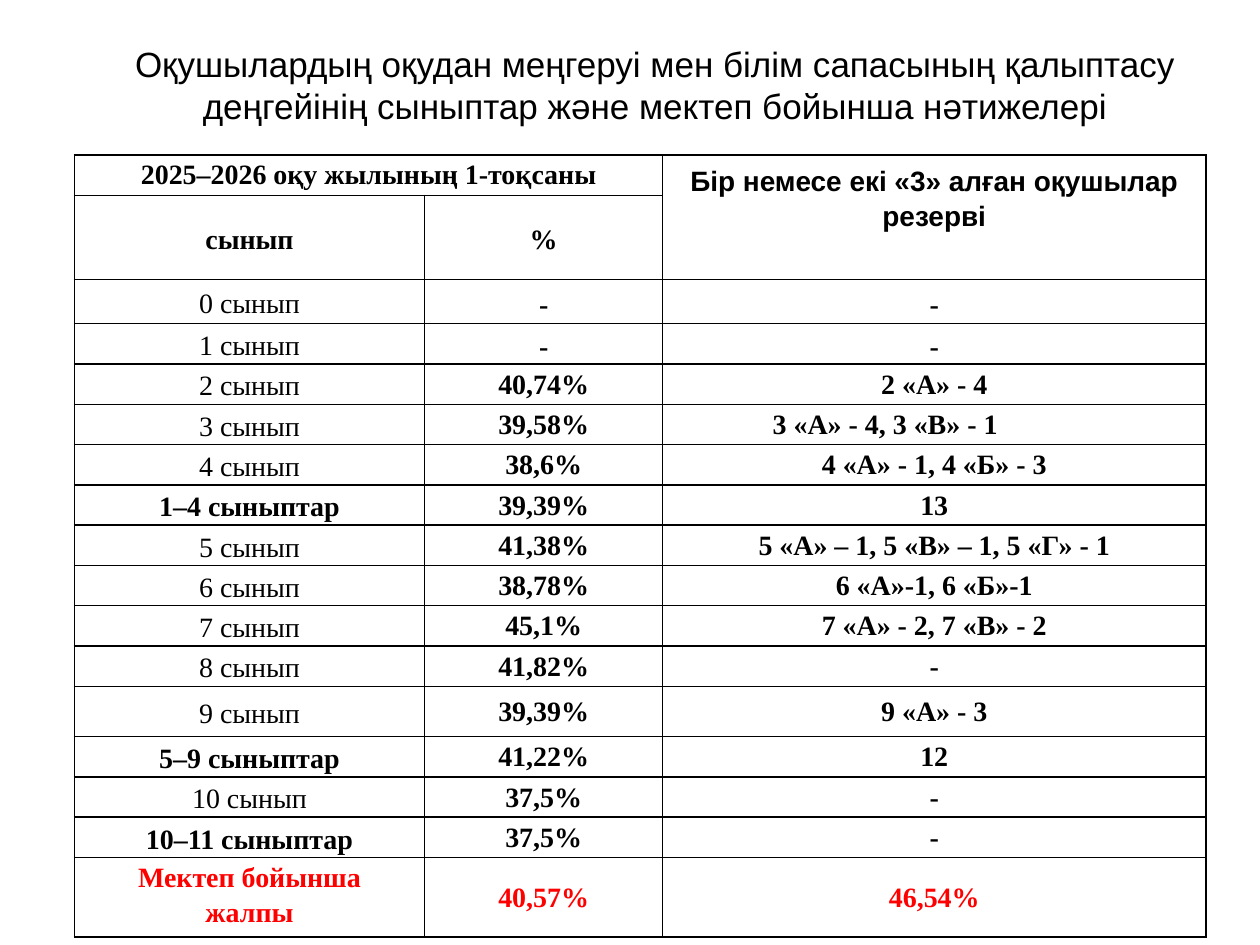
from pptx import Presentation
from pptx.dml.color import RGBColor as Rgb
from pptx.enum.text import MSO_ANCHOR as Anchor, MSO_AUTO_SIZE as Auto, PP_ALIGN as Align
from pptx.oxml import parse_xml
from pptx.oxml.ns import nsdecls
from pptx.util import Inches, Pt

COLORS = {"ink": "000000", "total": "FF0000"}
SERIF, SANS = "Times New Roman", "Arial"
TITLE = ("Оқушылардың оқудан меңгеруі мен білім сапасының қалыптасу "
         "деңгейінің сыныптар және мектеп бойынша нәтижелері")
TERM = "2025–2026 оқу жылының 1-тоқсаны"
RESERVE = "Бір немесе екі «3» алған оқушылар резерві"
TOTAL = "Мектеп бойынша\nжалпы"
COLS = [2.78, 1.89, 4.31]
HEAD = [0.32, 0.67]
TALL = {"0 сынып": 0.35, "9 сынып": 0.4, TOTAL: 0.63}
ROW = 0.32

# Class, share, pupils in reserve
ROWS = [
    ("0 сынып", "-", "-"),
    ("1 сынып", "-", "-"),
    ("2 сынып", "40,74%", "2 «А» - 4"),
    ("3 сынып", "39,58%", "3 «А» - 4, 3 «В» - 1"),
    ("4 сынып", "38,6%", "4 «А» - 1, 4 «Б» - 3"),
    ("1–4 сыныптар", "39,39%", "13"),
    ("5 сынып", "41,38%", "5 «А» – 1, 5 «В» – 1, 5 «Г» - 1"),
    ("6 сынып", "38,78%", "6 «А»-1, 6 «Б»-1"),
    ("7 сынып", "45,1%", "7 «А» - 2, 7 «В» - 2"),
    ("8 сынып", "41,82%", "-"),
    ("9 сынып", "39,39%", "9 «А» - 3"),
    ("5–9 сыныптар", "41,22%", "12"),
    ("10 сынып", "37,5%", "-"),
    ("10–11 сыныптар", "37,5%", "-"),
    (TOTAL, "40,57%", "46,54%"),
]


def style(para, size, face, color="ink", bold=False):
    para.alignment = Align.CENTER
    font = para.font
    font.size, font.name, font.bold = Pt(size), face, bold
    font.color.rgb = Rgb.from_string(COLORS[color])


def add_title(slide):
    title = slide.shapes.title
    title.left, title.top = Inches(0.67), Inches(0.29)
    title.width, title.height = Inches(9.06), Inches(1.11)
    frame = title.text_frame
    frame.text = TITLE
    frame.word_wrap, frame.auto_size = True, Auto.NONE
    frame.vertical_anchor = Anchor.TOP
    style(frame.paragraphs[0], 20, SANS)


def set_lines(cell):
    props = cell._tc.get_or_add_tcPr()
    for i, side in enumerate("LRTB"):
        props.insert(i, parse_xml(
            f'<a:ln{side} {nsdecls("a")} w="{Pt(1)}"><a:solidFill>'
            f'<a:srgbClr val="{COLORS["ink"]}"/></a:solidFill></a:ln{side}>'))


def fill_cell(cell, text, face=SERIF, color="ink", bold=True, spread=True,
              after=0, pad=(0.07, 0), anchor=Anchor.MIDDLE):
    side, top = pad
    cell.margin_left = cell.margin_right = Inches(side)
    cell.margin_top, cell.margin_bottom = Inches(top), 0
    cell.vertical_anchor = anchor
    cell.text = text
    for para in cell.text_frame.paragraphs:
        style(para, 16, face, color, bold)
        para.line_spacing = 1.15 if spread else 1.0
        para.space_after = Pt(after)


def add_grid(slide):
    heights = HEAD + [TALL.get(row[0], ROW) for row in ROWS]
    frame = slide.shapes.add_table(
        len(heights), len(COLS), Inches(0.59), Inches(1.23),
        Inches(sum(COLS)), Inches(sum(heights)))
    grid = frame.table
    grid.first_row = grid.horz_banding = False
    for col, width in zip(grid.columns, COLS):
        col.width = Inches(width)
    for row, height in zip(grid.rows, heights):
        row.height = Inches(height)
    for cell in grid.iter_cells():
        cell.fill.background()
        set_lines(cell)

    # Heading cells
    grid.cell(0, 0).merge(grid.cell(0, 1))
    grid.cell(0, 2).merge(grid.cell(1, 2))
    fill_cell(grid.cell(0, 0), TERM, after=8, anchor=Anchor.TOP)
    fill_cell(grid.cell(0, 2), RESERVE, face=SANS, pad=(0.1, 0.05), anchor=Anchor.TOP)
    fill_cell(grid.cell(1, 0), "сынып")
    fill_cell(grid.cell(1, 1), "%")

    # Class rows
    for i, (name, *values) in enumerate(ROWS, len(HEAD)):
        total = name == TOTAL
        group = name.endswith("сыныптар")
        color = "total" if total else "ink"
        fill_cell(grid.cell(i, 0), name, color=color, bold=group or total,
                  after=8 if group else 0,
                  anchor=Anchor.TOP if total else Anchor.MIDDLE)
        for j, value in enumerate(values, 1):
            fill_cell(grid.cell(i, j), value, color=color,
                      spread=values[0] == "-", pad=(0.01, 0.01))
        if name == "3 сынып":
            grid.cell(i, 2).margin_right = Inches(0.79)


def main():
    deck = Presentation()
    deck.slide_width, deck.slide_height = Inches(10), Inches(7.5)
    slide = deck.slides.add_slide(deck.slide_layouts[5])
    add_title(slide)
    add_grid(slide)
    deck.save("out.pptx")


if __name__ == "__main__":
    main()
